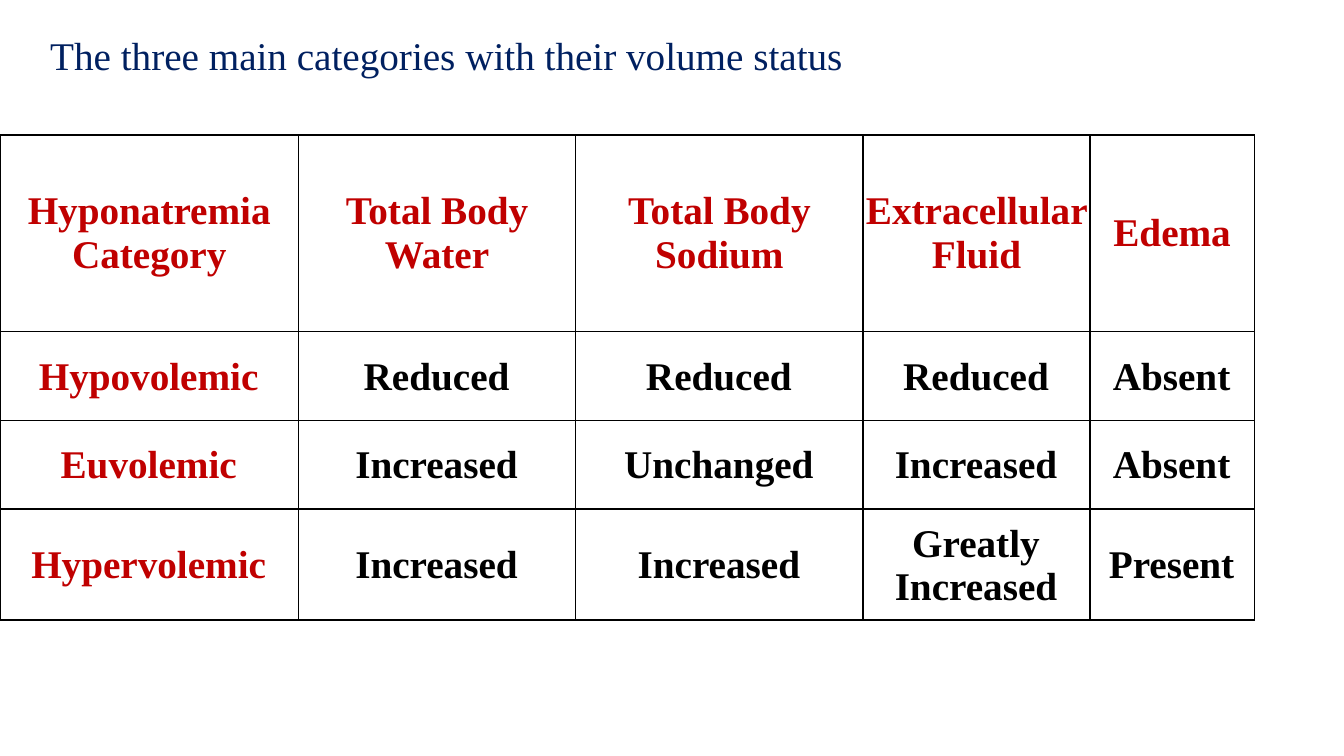
from dataclasses import dataclass

from lxml import etree
from pptx import Presentation
from pptx import util as u
from pptx.dml import color
from pptx.enum import text
from pptx.oxml import ns

FONT = "Times New Roman"
NAVY, RED, BLACK = "002060", "C00000", "000000"
COLUMN_WIDTHS = (2.96, 2.75, 2.85, 2.25, 1.63)


@dataclass
class Row:
    height: float
    labels: tuple[str, ...]


ROWS = (
    Row(1.95, ("Hyponatremia\vCategory", "Total Body Water", "Total Body Sodium",
               "Extracellular Fluid", "Edema")),
    Row(0.88, ("Hypovolemic", "Reduced", "Reduced", "Reduced", "Absent")),
    Row(0.88, ("Euvolemic", "Increased", "Unchanged", "Increased", "Absent")),
    Row(1.1, ("Hypervolemic", "Increased", "Increased", "Greatly Increased", "Present")),
)


def style(para, hex_color: str, bold: bool = False) -> None:
    para.font.name = FONT
    para.font.size = u.Pt(28)
    para.font.bold = bold
    para.font.color.rgb = color.RGBColor.from_string(hex_color)


def add_borders(cell) -> None:
    properties = cell._tc.get_or_add_tcPr()
    for side in ("L", "R", "T", "B"):
        line = etree.SubElement(properties, ns.qn(f"a:ln{side}"), w=str(u.Pt(1)))
        fill = etree.SubElement(line, ns.qn("a:solidFill"))
        etree.SubElement(fill, ns.qn("a:srgbClr"), val=BLACK)


def fill_cell(cell, label: str, is_header: bool, is_category: bool) -> None:
    add_borders(cell)
    cell.fill.background()
    insets = (0.01, 0.03, 0.01, 0.03) if is_header else (0.02, 0.04, 0.03, 0.02)
    (cell.margin_left, cell.margin_top,
     cell.margin_right, cell.margin_bottom) = map(u.Inches, insets)
    cell.vertical_anchor = text.MSO_ANCHOR.MIDDLE
    cell.text = label
    para = cell.text_frame.paragraphs[0]
    para.alignment = text.PP_ALIGN.CENTER
    style(para, RED if is_header or is_category else BLACK, bold=True)


def add_title(page) -> None:
    box = page.shapes.add_textbox(u.Inches(0.4), u.Inches(0.26),
                                  u.Inches(11.57), u.Inches(0.57))
    frame = box.text_frame
    frame.word_wrap = True
    frame.auto_size = text.MSO_AUTO_SIZE.SHAPE_TO_FIT_TEXT
    frame.text = "The three main categories with their volume status"
    style(frame.paragraphs[0], NAVY)


def add_status_table(page) -> None:
    table = page.shapes.add_table(
        len(ROWS), len(COLUMN_WIDTHS), u.Inches(0), u.Inches(1.34),
        u.Inches(sum(COLUMN_WIDTHS)), u.Inches(sum(row.height for row in ROWS))).table
    table.first_row = table.horz_banding = False
    for column, width in zip(table.columns, COLUMN_WIDTHS):
        column.width = u.Inches(width)
    for i, row in enumerate(ROWS):
        table.rows[i].height = u.Inches(row.height)
        for j, label in enumerate(row.labels):
            fill_cell(table.cell(i, j), label, is_header=i == 0, is_category=j == 0)


def main() -> None:
    deck = Presentation()
    deck.slide_width, deck.slide_height = u.Inches(13.33), u.Inches(7.5)
    page = deck.slides.add_slide(deck.slide_layouts[6])
    add_title(page)
    add_status_table(page)
    deck.save("out.pptx")


if __name__ == "__main__":
    main()
